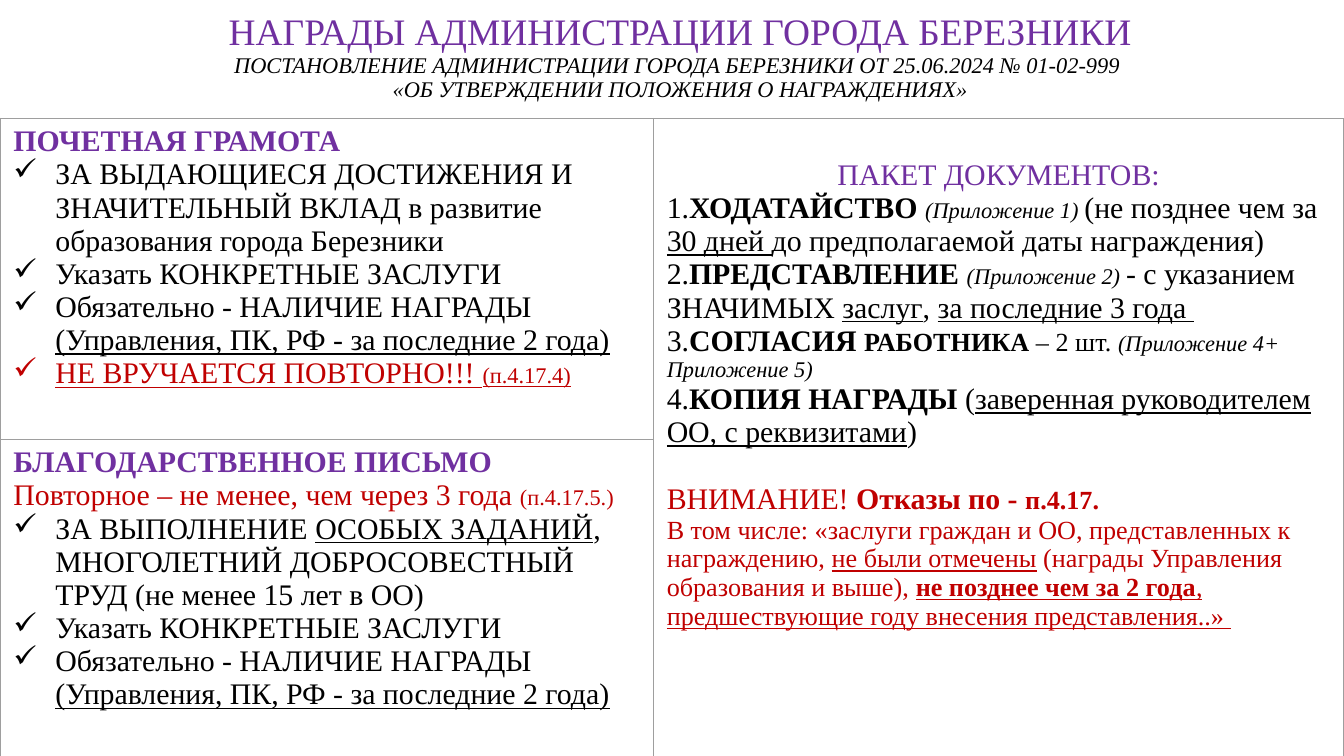
from lxml import etree
from pptx import Presentation
from pptx import util as u
from pptx.dml.color import RGBColor
from pptx.enum import text
from pptx.oxml import ns

FONT = "Times New Roman"
PURPLE, RED, BLACK, GREY = "7030A0", "C00000", "000000", "9E9E9E"
CENTER = text.PP_ALIGN.CENTER
COLUMNS = (350, 370)
ROWS = (172, 193)
LINE = 18

# A run is (text, style letters b/i/u, size); the last two may be left out.
# A paragraph is (runs, colour, options for add_paragraph).
BULLET = {"bullet": "✓"}
SPECIFY_MERITS = ([("Указать КОНКРЕТНЫЕ ЗАСЛУГИ",)], BLACK, BULLET)
PRIOR_AWARD = ([("Обязательно - НАЛИЧИЕ НАГРАДЫ ",),
                ("(Управления, ПК, РФ - за последние 2 года)", "u")], BLACK, BULLET)

HEADING = [
    ([("НАГРАДЫ АДМИНИСТРАЦИИ ГОРОДА БЕРЕЗНИКИ", "", 20)], PURPLE),
    ([("ПОСТАНОВЛЕНИЕ АДМИНИСТРАЦИИ ГОРОДА БЕРЕЗНИКИ ОТ 25.06.2024 № 01-02-999 ", "i", 12)], BLACK),
    ([("«ОБ УТВЕРЖДЕНИИ ПОЛОЖЕНИЯ О НАГРАЖДЕНИЯХ»", "i", 12)], BLACK),
]
CERTIFICATE = [
    ([("ПОЧЕТНАЯ ГРАМОТА", "b")], PURPLE, {}),
    ([("ЗА ВЫДАЮЩИЕСЯ ДОСТИЖЕНИЯ И ЗНАЧИТЕЛЬНЫЙ ВКЛАД в развитие образования города Березники",)],
     BLACK, BULLET),
    SPECIFY_MERITS,
    PRIOR_AWARD,
    ([("НЕ ВРУЧАЕТСЯ ПОВТОРНО!!! ", "u"), ("(п.4.17.4)", "u", 12)], RED, BULLET),
]
GRATITUDE = [
    ([("БЛАГОДАРСТВЕННОЕ ПИСЬМО", "b")], PURPLE, {}),
    ([("Повторное – не менее, чем через 3 года ",), ("(п.4.17.5.)", "", 12)], RED, {}),
    ([("ЗА ВЫПОЛНЕНИЕ ",), ("ОСОБЫХ ЗАДАНИЙ", "u"),
      (", МНОГОЛЕТНИЙ ДОБРОСОВЕСТНЫЙ ТРУД (не менее 15 лет в ОО)",)], BLACK, BULLET),
    SPECIFY_MERITS,
    PRIOR_AWARD,
]
DOCUMENTS = [
    ([("ПАКЕТ ДОКУМЕНТОВ:",)], PURPLE, {"align": CENTER}),
    ([("1.",), ("ХОДАТАЙСТВО ", "b"), ("(Приложение 1) ", "i", 12), ("(не позднее чем за ",),
      ("30 дней ", "u"), ("до предполагаемой даты награждения)",)], BLACK, {}),
    ([("2.",), ("ПРЕДСТАВЛЕНИЕ ", "b"), ("(Приложение 2) ", "i", 12), ("- с указанием",)], BLACK, {}),
    ([("ЗНАЧИМЫХ ",), ("заслуг", "u"), (", ",), ("за последние 3 года ", "u")], BLACK, {}),
    ([("3.",), ("СОГЛАСИЯ ", "b"), ("РАБОТНИКА ", "b", 14), ("– 2 шт. ", "", 14),
      ("(Приложение 4+ Приложение 5)", "i", 12)], BLACK, {}),
    ([("4.",), ("КОПИЯ НАГРАДЫ ", "b"), ("(",),
      ("заверенная руководителем ОО, с реквизитами", "u"), (")",)], BLACK, {}),
    ([("ВНИМАНИЕ! ",), ("Отказы по - ", "b"), ("п.4.17.", "b", 14)], RED, {"before": LINE}),
    ([("В том числе: «заслуги граждан и ОО, представленных к награждению, ", "", 14),
      ("не были отмечены", "u", 14), (" (награды Управления образования и выше), ", "", 14),
      ("не позднее чем за 2 года", "bu", 14),
      (", предшествующие году внесения представления..» ", "u", 14)], RED, {}),
]


def rgb(value):
    return RGBColor.from_string(value)


def add_run(p, color, content, style="", size=16):
    r = p.add_run()
    r.text = content
    f = r.font
    f.name, f.size = FONT, u.Pt(size)
    f.bold, f.italic, f.underline = (letter in style for letter in "biu")
    f.color.rgb = rgb(color)


def add_paragraph(tf, index, runs, color, align=None, bullet=None, before=0):
    p = tf.paragraphs[0] if index == 0 else tf.add_paragraph()
    p.alignment = align
    if before:
        p.space_before = u.Pt(before)
    if bullet:
        pPr = p._p.get_or_add_pPr()
        pPr.set("marL", str(u.Pt(22.5)))
        pPr.set("indent", str(-u.Pt(22.5)))
        etree.SubElement(pPr, ns.qn("a:buChar")).set("char", bullet)
    for run in runs:
        add_run(p, color, *run)
    return p


def add_heading(s):
    sp = s.shapes.title
    sp.left, sp.top, sp.width, sp.height = u.Pt(0), u.Pt(0), u.Pt(720), u.Pt(57.6)
    tf = sp.text_frame
    tf.auto_size = text.MSO_AUTO_SIZE.NONE
    tf.vertical_anchor = text.MSO_ANCHOR.TOP
    tf.margin_left = tf.margin_right = tf.margin_top = tf.margin_bottom = u.Pt(7.2)
    for i, (runs, color) in enumerate(HEADING):
        p = add_paragraph(tf, i, runs, color, CENTER)
        p.line_spacing = 0.9
        p.space_before = u.Pt(0)
        p._p.get_or_add_pPr().set("marL", str(u.Pt(9)))


def style_cell(cell):
    """Give the cell thin grey borders on all sides and no fill."""
    tcPr = cell._tc.get_or_add_tcPr()
    for side in "LRTB":
        ln = etree.SubElement(tcPr, ns.qn(f"a:ln{side}"), w=str(u.Pt(0.75)))
        fill = etree.SubElement(ln, ns.qn("a:solidFill"))
        etree.SubElement(fill, ns.qn("a:srgbClr"), val=GREY)
    cell.fill.background()


def fill_cell(cell, paragraphs):
    for i, (runs, color, options) in enumerate(paragraphs):
        add_paragraph(cell.text_frame, i, runs, color, **options)


def add_awards_table(s):
    frame = s.shapes.add_table(2, 2, u.Pt(0), u.Pt(63.4), u.Pt(sum(COLUMNS)), u.Pt(sum(ROWS)))
    table = frame.table
    table.first_row = table.horz_banding = False
    for column, width in zip(table.columns, COLUMNS):
        column.width = u.Pt(width)
    for row, height in zip(table.rows, ROWS):
        row.height = u.Pt(height)
    for cell in table.iter_cells():
        style_cell(cell)
    documents = table.cell(0, 1)
    documents.merge(table.cell(1, 1))
    documents.margin_top = u.Pt(3.6 + LINE)
    fill_cell(table.cell(0, 0), CERTIFICATE)
    fill_cell(table.cell(1, 0), GRATITUDE)
    fill_cell(documents, DOCUMENTS)


def main():
    prs = Presentation()
    prs.slide_width, prs.slide_height = u.Pt(720), u.Pt(405)
    s = prs.slides.add_slide(prs.slide_layouts.get_by_name("Title Only"))
    add_heading(s)
    add_awards_table(s)
    prs.save("out.pptx")


if __name__ == "__main__":
    main()
